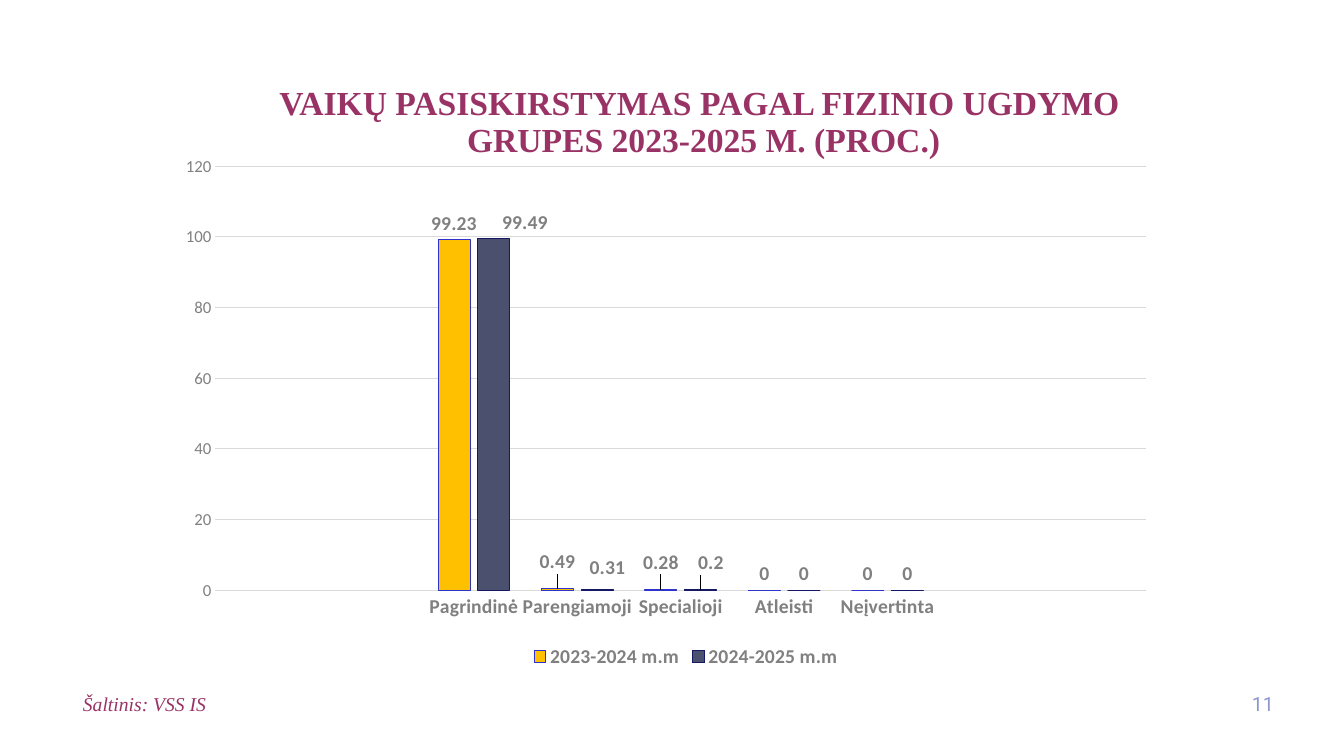
from lxml.etree import SubElement
from pptx import Presentation
from pptx.chart.data import CategoryChartData
from pptx.dml.color import RGBColor
from pptx.enum.chart import XL_CHART_TYPE, XL_LABEL_POSITION, XL_LEGEND_POSITION, XL_TICK_MARK
from pptx.enum.text import MSO_ANCHOR, PP_ALIGN
from pptx.oxml.ns import qn
from pptx.util import Emu, Pt

PLUM = RGBColor(0x99, 0x33, 0x66)
LAVENDER = RGBColor(0x8E, 0x96, 0xCD)
GREY = RGBColor(0x80, 0x80, 0x80)
GRID = RGBColor(0xD9, 0xD9, 0xD9)
BLACK = RGBColor(0x00, 0x00, 0x00)
GOLD = RGBColor(0xFF, 0xC0, 0x00)
BLUE = RGBColor(0x2D, 0x33, 0xCB)
SLATE = RGBColor(0x4A, 0x50, 0x6D)
NAVY = RGBColor(0x15, 0x18, 0x65)

GROUPS = ["", "", "Pagrindinė", "Parengiamoji", "Specialioji", "Atleisti", "Neįvertinta", "", ""]
YEARS = [
    ("2023-2024 m.m", [99.23, 0.49, 0.28, 0, 0], GOLD, BLUE,
     {3: (0, -0.02), 4: (0, -0.02)}),
    ("2024-2025 m.m", [99.49, 0.31, 0.2, 0, 0], SLATE, NAVY,
     {2: (0.03, 0), 3: (0.01, -0.01), 4: (0.01, -0.02)}),
]


def px(length):
    """Turn px into EMU."""
    return Emu(round(length * 914400 / 100.8))


def style_font(font, size, color, name="Calibri", bold=False, italic=False):
    """Set the look of a font."""
    font.size, font.name, font.bold, font.italic = Pt(size), name, bold, italic
    font.color.rgb = color


def add_line(slide, box, text, align, anchor, **look):
    """Add one paragraph of text in a box."""
    frame = slide.shapes.add_textbox(*map(px, box)).text_frame
    frame.word_wrap = True
    frame.vertical_anchor = anchor
    paragraph = frame.paragraphs[0]
    paragraph.text = text
    paragraph.alignment = align
    style_font(paragraph.font, **look)
    return paragraph


def add_heading(slide, box):
    """Add the two-line heading."""
    heading = add_line(
        slide, box, "VAIKŲ PASISKIRSTYMAS PAGAL FIZINIO UGDYMO\v GRUPES 2023-2025 M. (PROC.)",
        PP_ALIGN.CENTER, MSO_ANCHOR.TOP, size=24, color=PLUM, name="Times New Roman", bold=True)
    heading.line_spacing = 0.9


def add_footer(slide, box):
    """Add the source at the left and the page number at the right."""
    left, top, width, height = box
    page_width = 52
    add_line(slide, (left, top, 635, height), "Šaltinis: VSS IS", PP_ALIGN.LEFT,
             MSO_ANCHOR.MIDDLE, size=14, color=PLUM, name="Times New Roman", italic=True)
    add_line(slide, (left + width - page_width, top, page_width, height), "11",
             PP_ALIGN.RIGHT, MSO_ANCHOR.MIDDLE, size=14, color=LAVENDER, name="Roboto")


def fill_layout(layout, **settings):
    """Write a manual chart layout."""
    manual = SubElement(layout, qn("c:manualLayout"))
    for tag, value in settings.items():
        SubElement(manual, qn(f"c:{tag}")).set("val", str(value))


def style_series(series, fill, outline, shifts):
    """Colour one school year and place its value labels."""
    series.format.fill.solid()
    series.format.fill.fore_color.rgb = fill
    series.format.line.color.rgb = outline
    series.format.line.width = Pt(0.75)
    labels = series.data_labels
    labels.show_value = True
    labels.position = XL_LABEL_POSITION.OUTSIDE_END
    style_font(labels.font, 14, GREY, bold=True)
    for index, (x, y) in shifts.items():
        label = series.points[index].data_label
        label.position = XL_LABEL_POSITION.OUTSIDE_END
        style_font(label.font, 14, GREY, bold=True)
        idx = series._element.xpath(f"c:dLbls/c:dLbl/c:idx[@val='{index}']")[0]
        layout = SubElement(idx.getparent(), qn("c:layout"))
        idx.addnext(layout)
        fill_layout(layout, x=x, y=y)


def style_axes(chart):
    """Style both axes and the gridlines."""
    groups, percent = chart.category_axis, chart.value_axis
    for axis in (groups, percent):
        axis.major_tick_mark = axis.minor_tick_mark = XL_TICK_MARK.NONE
    style_font(groups.tick_labels.font, 14, GREY, bold=True)
    style_font(percent.tick_labels.font, 12, GREY)
    percent.minimum_scale, percent.maximum_scale, percent.major_unit = 0, 120, 20
    percent.format.line.fill.background()
    for line in (groups.format.line, percent.major_gridlines.format.line):
        line.color.rgb = GRID
        line.width = Pt(0.75)


def add_group_chart(slide, box):
    """Add the column chart of physical education groups."""
    shares = CategoryChartData()
    shares.categories = GROUPS
    for year, values, *_ in YEARS:
        shares.add_series(year, [None, None, *values, None, None])
    chart = slide.shapes.add_chart(XL_CHART_TYPE.COLUMN_CLUSTERED, *map(px, box), shares).chart
    style_font(chart.font, 10, BLACK)
    chart.has_title = False
    chart.has_legend = True
    chart.legend.position = XL_LEGEND_POSITION.BOTTOM
    chart.legend.include_in_layout = False
    style_font(chart.legend.font, 14, GREY, bold=True)
    columns = chart.plots[0]
    columns.vary_by_categories = False
    columns.gap_width, columns.overlap = 100, -24
    for series, (_, _, fill, outline, shifts) in zip(columns.series, YEARS):
        style_series(series, fill, outline, shifts)
    style_axes(chart)
    plot_area = chart._chartSpace.chart.plotArea
    for old in plot_area.findall(qn("c:layout")):
        plot_area.remove(old)
    layout = SubElement(plot_area, qn("c:layout"))
    plot_area.insert(0, layout)
    fill_layout(layout, layoutTarget="inner", xMode="edge", yMode="edge",
                x=0.05, y=0.02, w=0.89, h=0.82)


def main():
    """Build and save the slide."""
    deck = Presentation()
    deck.slide_width, deck.slide_height = px(1344), px(756)
    slide = deck.slides.add_slide(deck.slide_layouts[6])
    add_heading(slide, (73, 82, 1253, 75))
    add_footer(slide, (73, 684, 1211, 39))
    add_group_chart(slide, (163, 156, 1046, 517))
    deck.save("out.pptx")


if __name__ == "__main__":
    main()
